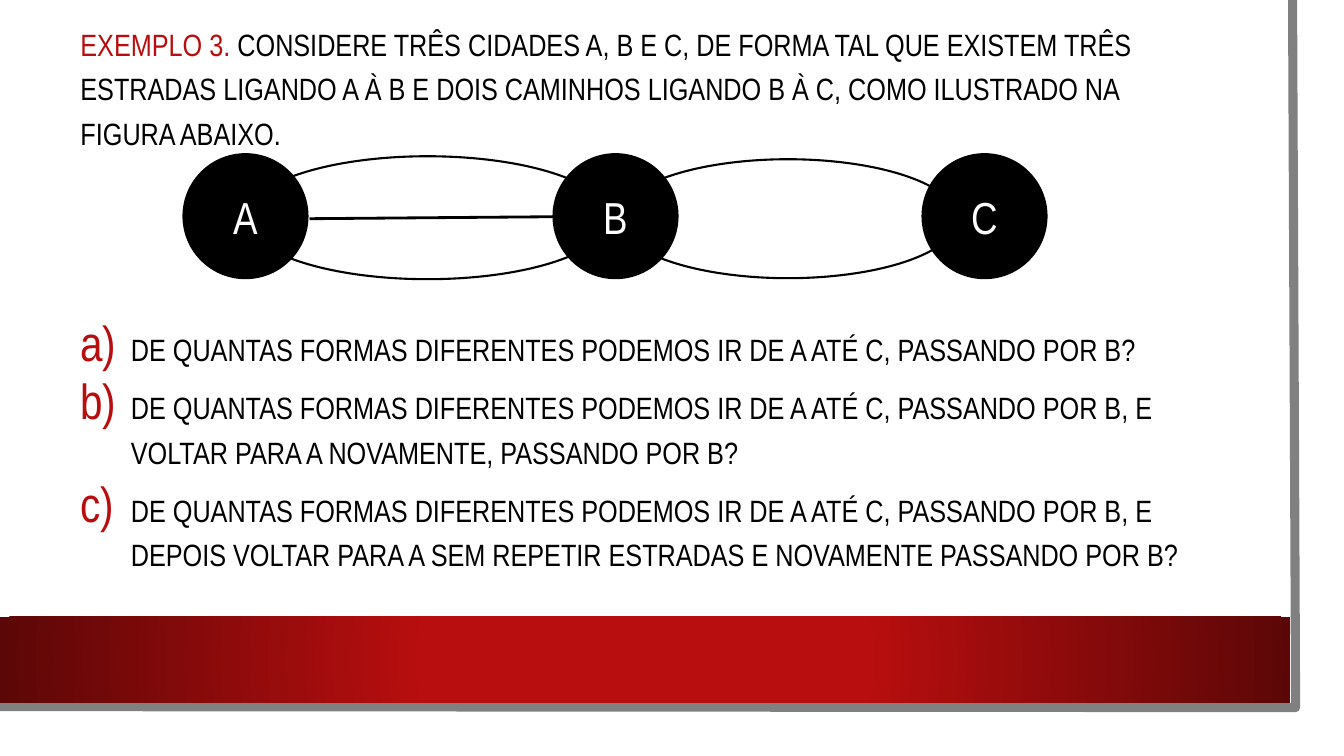
"""Build the slide on roads between three cities."""
from dataclasses import dataclass

from lxml import etree
from pptx import Presentation
from pptx.dml.color import RGBColor
from pptx.enum.shapes import MSO_CONNECTOR, MSO_SHAPE
from pptx.enum.text import MSO_ANCHOR, PP_ALIGN
from pptx.oxml import parse_xml
from pptx.oxml.ns import nsdecls, qn
from pptx.util import Inches, Pt

RECT, OVAL = MSO_SHAPE.RECTANGLE, MSO_SHAPE.OVAL
MIDDLE, CENTER = MSO_ANCHOR.MIDDLE, PP_ALIGN.CENTER
STRAIGHT = MSO_CONNECTOR.STRAIGHT
FONT = "Arial Narrow"
RED, DARK, GRAY, BLACK, WHITE = "B80E0F", "5C0707", "808080", "000000", "FFFFFF"
BODY = 22
TITLE = "EXEMPLO 3. "
INTRO = (
    "CONSIDERE TRÊS CIDADES A, B E C, DE FORMA TAL QUE EXISTEM TRÊS ESTRADAS "
    "LIGANDO A À B E DOIS CAMINHOS LIGANDO B À C, COMO ILUSTRADO NA FIGURA ABAIXO."
)
ASK = "DE QUANTAS FORMAS DIFERENTES PODEMOS IR DE A ATÉ C, PASSANDO POR B"
ENDS = (
    "?",
    ", E VOLTAR PARA A NOVAMENTE, PASSANDO POR B?",
    ", E DEPOIS VOLTAR PARA A SEM REPETIR ESTRADAS E NOVAMENTE PASSANDO POR B?",
)


@dataclass
class Shape:
    """A preset shape with its box in inches."""
    kind: int
    x: float
    y: float
    w: float
    h: float
    fill: str = WHITE
    line: str = ""
    text: str = ""


ROADS = (
    Shape(OVAL, 2.43, 1.55, 3.62, 1.22, line=BLACK),
    Shape(OVAL, 6.13, 1.58, 3.37, 1.18, line=BLACK),
)
TOWNS = [
    Shape(OVAL, x, 1.53, 1.23, 1.23, BLACK, BLACK, name)
    for name, x in (("A", 1.82), ("B", 5.49), ("C", 9.15))
]


def color(code: str) -> RGBColor:
    """Turn a hex string into a colour."""
    return RGBColor.from_string(code)


def add_run(para, text: str, size: int, code: str) -> None:
    """Append one styled run."""
    run = para.add_run()
    run.text = text
    run.font.name = FONT
    run.font.size = Pt(size)
    run.font.color.rgb = color(code)


def draw(slide, item: Shape):
    """Draw a shape with its optional outline and label."""
    box = [Inches(v) for v in (item.x, item.y, item.w, item.h)]
    shape = slide.shapes.add_shape(item.kind, *box)
    shape.shadow.inherit = False
    shape.fill.solid()
    shape.fill.fore_color.rgb = color(item.fill)
    if item.line:
        shape.line.color.rgb = color(item.line)
        shape.line.width = Pt(1.5)
    else:
        shape.line.fill.background()
    if item.text:
        frame = shape.text_frame
        frame.vertical_anchor = MIDDLE
        para = frame.paragraphs[0]
        para.alignment = CENTER
        add_run(para, item.text, 32, WHITE)
    return shape


def add_edge(slide) -> None:
    """Draw the grey edge on the right and below."""
    pen = slide.shapes.build_freeform(Inches(12.82), 0)
    points = [(Inches(12.85), Inches(7.02)), (0, Inches(7.01))]
    pen.add_line_segments(points, close=False)
    edge = pen.convert_to_shape()
    edge.shadow.inherit = False
    edge.fill.background()
    edge.line.color.rgb = color(GRAY)
    edge.line.width = Pt(6.5)


def add_band(slide) -> None:
    """Draw the red band with its radial gradient."""
    band = draw(slide, Shape(RECT, 0, 6.12, 12.8, 0.85, RED))
    stops = "".join(
        f'<a:gs pos="{spot}000"><a:srgbClr val="{code}"/></a:gs>'
        for spot, code in ((34, RED), (100, DARK))
    )
    grad = parse_xml(
        f'<a:gradFill {nsdecls("a")} rotWithShape="1"><a:gsLst>{stops}</a:gsLst>'
        '<a:path path="circle"><a:fillToRect l="50000" t="50000" r="50000" '
        'b="50000"/></a:path></a:gradFill>'
    )
    props = band.element.spPr
    props.replace(props.find(qn("a:solidFill")), grad)


def add_road(slide) -> None:
    """Draw the straight road from A to B."""
    ends = [Inches(v) for v in (3.07, 2.17, 5.49, 2.15)]
    road = slide.shapes.add_connector(STRAIGHT, *ends)
    road.line.color.rgb = color(BLACK)
    road.line.width = Pt(2)
    etree.SubElement(road.element.spPr, qn("a:effectLst"))


def add_box(slide, top: float, high: float):
    """Add a wrapped text box and return its frame."""
    box = slide.shapes.add_textbox(
        Inches(0.7), Inches(top), Inches(11.37), Inches(high)
    )
    frame = box.text_frame
    frame.word_wrap = True
    frame.vertical_anchor = MIDDLE
    return frame


def add_mark(para) -> None:
    """Give a paragraph a red letter and a hanging indent."""
    props = para._p.get_or_add_pPr()
    props.set("marL", str(Inches(0.5)))
    props.set("indent", str(Inches(-0.5)))
    tint = etree.SubElement(props, qn("a:buClr"))
    etree.SubElement(tint, qn("a:srgbClr"), val=RED)
    etree.SubElement(props, qn("a:buSzPct"), val="160000")
    etree.SubElement(props, qn("a:buFont"), typeface=FONT)
    etree.SubElement(props, qn("a:buAutoNum"), type="alphaLcParenR")


def add_list(slide) -> None:
    """Add the lettered questions."""
    frame = add_box(slide, 2.96, 2.97)
    for i, end in enumerate(ENDS):
        para = frame.add_paragraph() if i else frame.paragraphs[0]
        add_mark(para)
        para.line_spacing = 1.2
        if i:
            para.space_before = Pt(10)
        add_run(para, ASK + end, BODY, BLACK)


def main() -> None:
    """Build and save the deck."""
    deck = Presentation()
    deck.slide_width, deck.slide_height = Inches(13.33), Inches(7.5)
    slide = deck.slides.add_slide(deck.slide_layouts[6])
    draw(slide, Shape(RECT, 0, 0, 13.1, 7.27))
    add_edge(slide)
    add_band(slide)
    intro = add_box(slide, 0.15, 1.38).paragraphs[0]
    intro.line_spacing = 1.2
    add_run(intro, TITLE, BODY, RED)
    add_run(intro, INTRO, BODY, BLACK)
    for item in (*ROADS, *TOWNS):
        draw(slide, item)
    add_road(slide)
    add_list(slide)
    deck.save("out.pptx")


if __name__ == "__main__":
    main()
